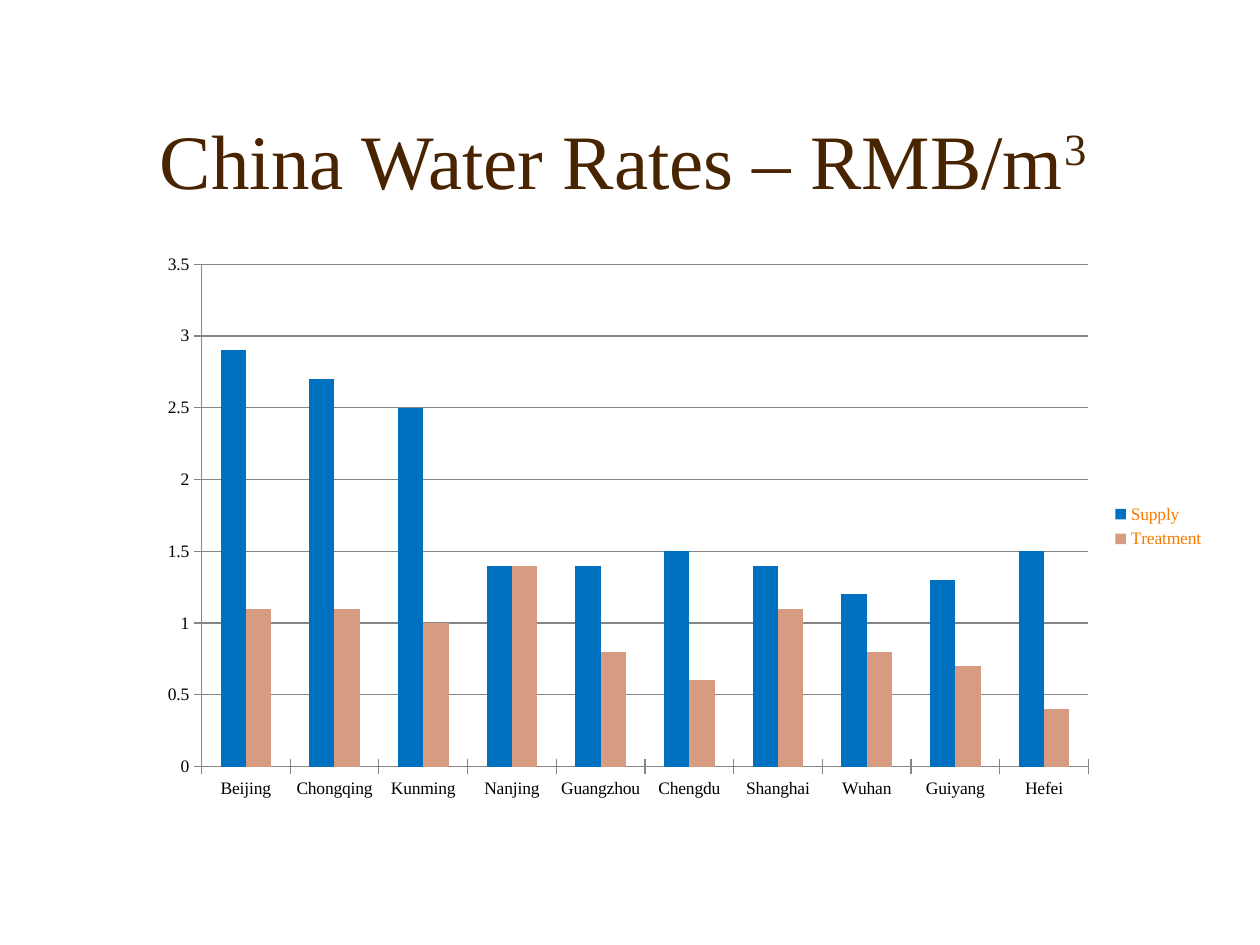
from typing import NamedTuple

from pptx import Presentation
from pptx.chart.data import CategoryChartData
from pptx.dml.color import RGBColor
from pptx.enum.chart import XL_CHART_TYPE, XL_LEGEND_POSITION, XL_TICK_MARK
from pptx.enum.text import MSO_ANCHOR, MSO_AUTO_SIZE, PP_ALIGN
from pptx.util import Cm, Pt

CLUSTERED = XL_CHART_TYPE.COLUMN_CLUSTERED
LEGEND_RIGHT = XL_LEGEND_POSITION.RIGHT
TICK_CROSS = XL_TICK_MARK.CROSS
BOTTOM = MSO_ANCHOR.BOTTOM
NO_AUTOFIT = MSO_AUTO_SIZE.NONE
LEFT = PP_ALIGN.LEFT
TITLE_ONLY = 5
FONT = "Times New Roman"
GRID = "868686"


class Rate(NamedTuple):
    city: str
    supply: float
    treatment: float


class RateSeries(NamedTuple):
    name: str
    field: str
    color: str


RATES = [
    Rate("Beijing", 2.9, 1.1),
    Rate("Chongqing", 2.7, 1.1),
    Rate("Kunming", 2.5, 1),
    Rate("Nanjing", 1.4, 1.4),
    Rate("Guangzhou", 1.4, 0.8),
    Rate("Chengdu", 1.5, 0.6),
    Rate("Shanghai", 1.4, 1.1),
    Rate("Wuhan", 1.2, 0.8),
    Rate("Guiyang", 1.3, 0.7),
    Rate("Hefei", 1.5, 0.4),
]
SERIES = [
    RateSeries("Supply", "supply", "0070C0"),
    RateSeries("Treatment", "treatment", "D69B80"),
]


def rgb(value: str) -> RGBColor:
    return RGBColor.from_string(value)


def set_font(font, size: float, color: str) -> None:
    font.name = FONT
    font.size = Pt(size)
    font.bold = False
    font.color.rgb = rgb(color)


def set_line(line) -> None:
    line.color.rgb = rgb(GRID)
    line.width = Pt(0.75)


def write_title(title) -> None:
    title.left, title.top = Cm(2.97), Cm(1.07)
    title.width, title.height = Cm(21.59), Cm(3.18)
    frame = title.text_frame
    frame.word_wrap = True
    frame.auto_size = NO_AUTOFIT
    frame.vertical_anchor = BOTTOM
    paragraph = frame.paragraphs[0]
    paragraph.alignment = LEFT
    paragraph.add_run().text = "China Water Rates – RMB/m"
    exponent = paragraph.add_run()
    exponent.text = "3"
    exponent._r.get_or_add_rPr().set("baseline", "30000")
    set_font(paragraph.font, 44, "482400")


def add_rates_chart(slide) -> None:
    data = CategoryChartData()
    data.categories = [rate.city for rate in RATES]
    for series in SERIES:
        data.add_series(series.name, [getattr(rate, series.field) for rate in RATES])
    chart = slide.shapes.add_chart(
        CLUSTERED, Cm(2.95), Cm(4.9), Cm(21.59), Cm(11.43), data
    ).chart
    chart.has_title = False
    set_font(chart.font, 10, "000000")

    plot = chart.plots[0]
    plot.gap_width = 150
    plot.overlap = 0
    plot.vary_by_categories = False
    for drawn, series in zip(plot.series, SERIES):
        drawn.format.fill.solid()
        drawn.format.fill.fore_color.rgb = rgb(series.color)
        drawn.invert_if_negative = False

    for axis in (chart.category_axis, chart.value_axis):
        axis.major_tick_mark = TICK_CROSS
        set_line(axis.format.line)
    value_axis = chart.value_axis
    value_axis.minimum_scale, value_axis.maximum_scale = 0, 3.5
    value_axis.major_unit = 0.5
    value_axis.has_major_gridlines = True
    set_line(value_axis.major_gridlines.format.line)

    chart.has_legend = True
    chart.legend.position = LEGEND_RIGHT
    chart.legend.include_in_layout = False
    set_font(chart.legend.font, 10, "F77C00")


def main() -> None:
    presentation = Presentation()
    presentation.slide_width, presentation.slide_height = Cm(25.4), Cm(19.05)
    slide = presentation.slides.add_slide(presentation.slide_layouts[TITLE_ONLY])
    write_title(slide.shapes.title)
    add_rates_chart(slide)
    presentation.save("out.pptx")


if __name__ == "__main__":
    main()
